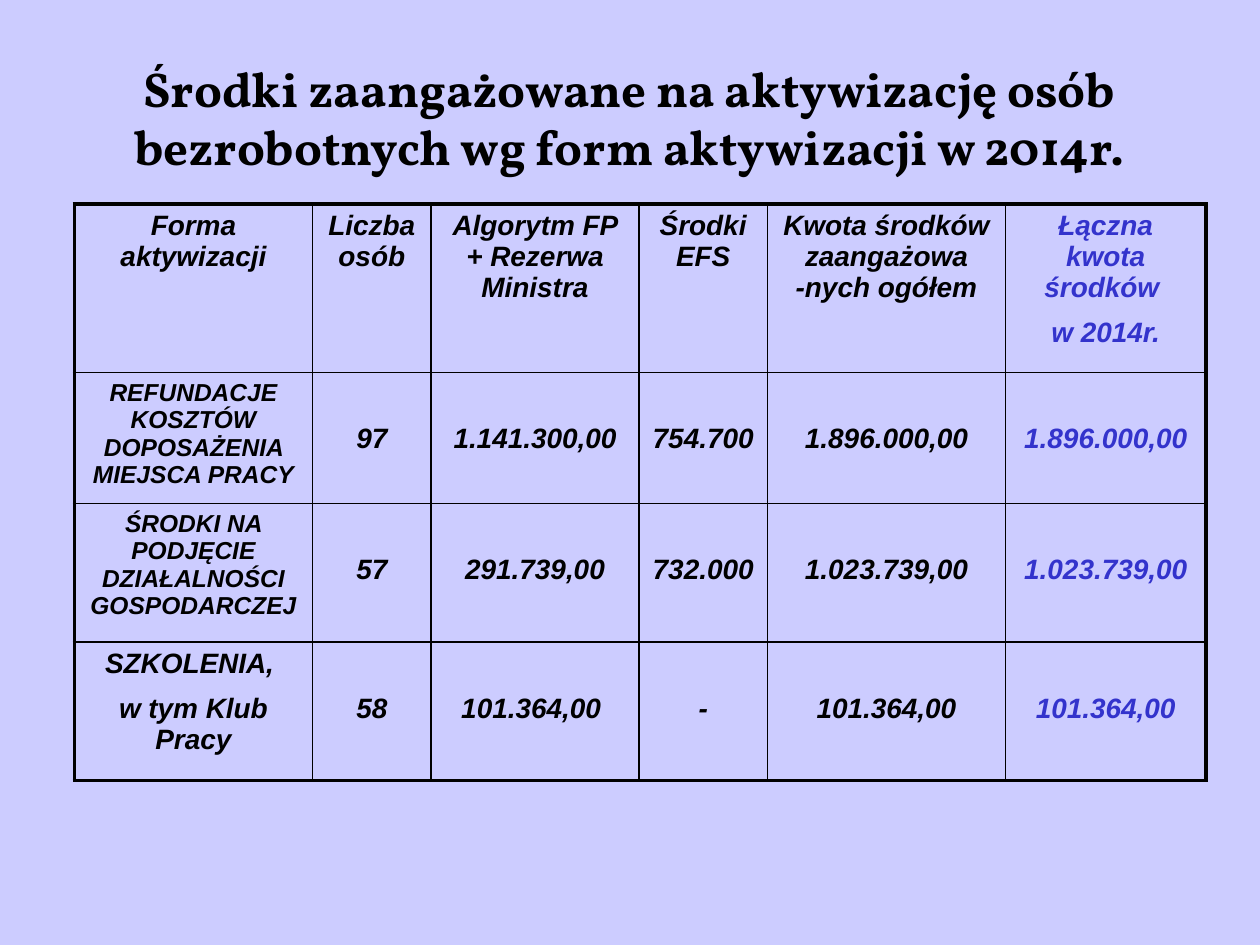
from dataclasses import dataclass

from lxml import etree
from pptx import Presentation
from pptx import util as u
from pptx.dml.color import RGBColor
from pptx.enum import text
from pptx.oxml import ns

COLORS = {"background": "CCCCFF", "ink": "000000", "total": "3333CC"}
COL_WIDTHS = [4.8, 2.39, 4.19, 2.59, 4.8, 4.04]
ROW_HEIGHTS = [3.4, 2.64, 2.79, 2.79]
OUTER, INNER = 2.25, 1
VALUE_TOP = 1.03
CELL_TOP = 0.13


@dataclass
class Row:
    label: str
    values: list[str]
    label_size: int = 16
    top: float = VALUE_TOP


ROWS = [
    Row("Forma aktywizacji",
        ["Liczba osób", "Algorytm FP + Rezerwa Ministra", "Środki EFS",
         "Kwota środków zaangażowa -nych ogółem",
         "Łączna kwota środków \nw 2014r."], top=CELL_TOP),
    Row("REFUNDACJE KOSZTÓW DOPOSAŻENIA MIEJSCA PRACY",
        ["97", "1.141.300,00", "754.700", "1.896.000,00", "1.896.000,00"], 14),
    Row("ŚRODKI NA PODJĘCIE DZIAŁALNOŚCI GOSPODARCZEJ",
        ["57", "291.739,00", "732.000 ", "1.023.739,00", "1.023.739,00"], 14),
    Row("SZKOLENIA, \nw tym Klub Pracy",
        ["58", "101.364,00 ", "-", "101.364,00", "101.364,00"]),
]


def rgb(name: str) -> RGBColor:
    return RGBColor.from_string(COLORS[name])


def set_font(p, name: str, size: int, color: str, italic: bool = False) -> None:
    p.alignment = text.PP_ALIGN.CENTER
    f = p.font
    f.name, f.size, f.bold, f.italic = name, u.Pt(size), True, italic
    f.color.rgb = rgb(color)


def add_border(cell, side: str, width: float) -> None:
    ln = etree.SubElement(cell._tc.get_or_add_tcPr(), ns.qn(f"a:ln{side}"),
                          w=str(u.Pt(width)))
    fill = etree.SubElement(ln, ns.qn("a:solidFill"))
    etree.SubElement(fill, ns.qn("a:srgbClr"), val=COLORS["ink"])


def fill_cell(cell, content: str, size: int, color: str, top: float) -> None:
    cell.fill.background()
    cell.margin_top = u.Cm(top)
    cell.text = content
    for p in cell.text_frame.paragraphs:
        set_font(p, "Arial", size, color, italic=True)
        p.space_before = u.Pt(8)


def add_funds_table(s) -> None:
    n_rows, n_cols = len(ROWS), len(COL_WIDTHS)
    tbl = s.shapes.add_table(n_rows, n_cols, u.Cm(1.5), u.Cm(4.11),
                             u.Cm(sum(COL_WIDTHS)), u.Cm(sum(ROW_HEIGHTS))).table
    tbl.first_row = tbl.horz_banding = False
    for col, width in zip(tbl.columns, COL_WIDTHS):
        col.width = u.Cm(width)
    for i, (row, height) in enumerate(zip(ROWS, ROW_HEIGHTS)):
        tbl.rows[i].height = u.Cm(height)
        for j, content in enumerate([row.label, *row.values]):
            cell = tbl.cell(i, j)
            edges = {"L": j == 0, "R": j == n_cols - 1,
                     "T": i == 0, "B": i == n_rows - 1}
            for side, is_outer in edges.items():
                add_border(cell, side, OUTER if is_outer else INNER)
            fill_cell(cell, content,
                      row.label_size if j == 0 else 16,
                      "total" if j == n_cols - 1 else "ink",
                      CELL_TOP if j == 0 else row.top)


def add_title(s, content: str) -> None:
    sp = s.shapes.title
    sp.left, sp.top, sp.width, sp.height = map(u.Cm, (1.27, 0.36, 22.83, 3.99))
    tf = sp.text_frame
    tf.text = content
    tf.vertical_anchor = text.MSO_ANCHOR.MIDDLE
    set_font(tf.paragraphs[0], "Vollkorn", 28, "ink")


def main() -> None:
    prs = Presentation()
    prs.slide_width, prs.slide_height = u.Cm(25.4), u.Cm(19.05)
    s = prs.slides.add_slide(prs.slide_layouts[5])
    s.background.fill.solid()
    s.background.fill.fore_color.rgb = rgb("background")
    add_title(s, "Środki zaangażowane na aktywizację osób "
                 "bezrobotnych wg form aktywizacji w 2014r.")
    add_funds_table(s)
    prs.save("out.pptx")


if __name__ == "__main__":
    main()
